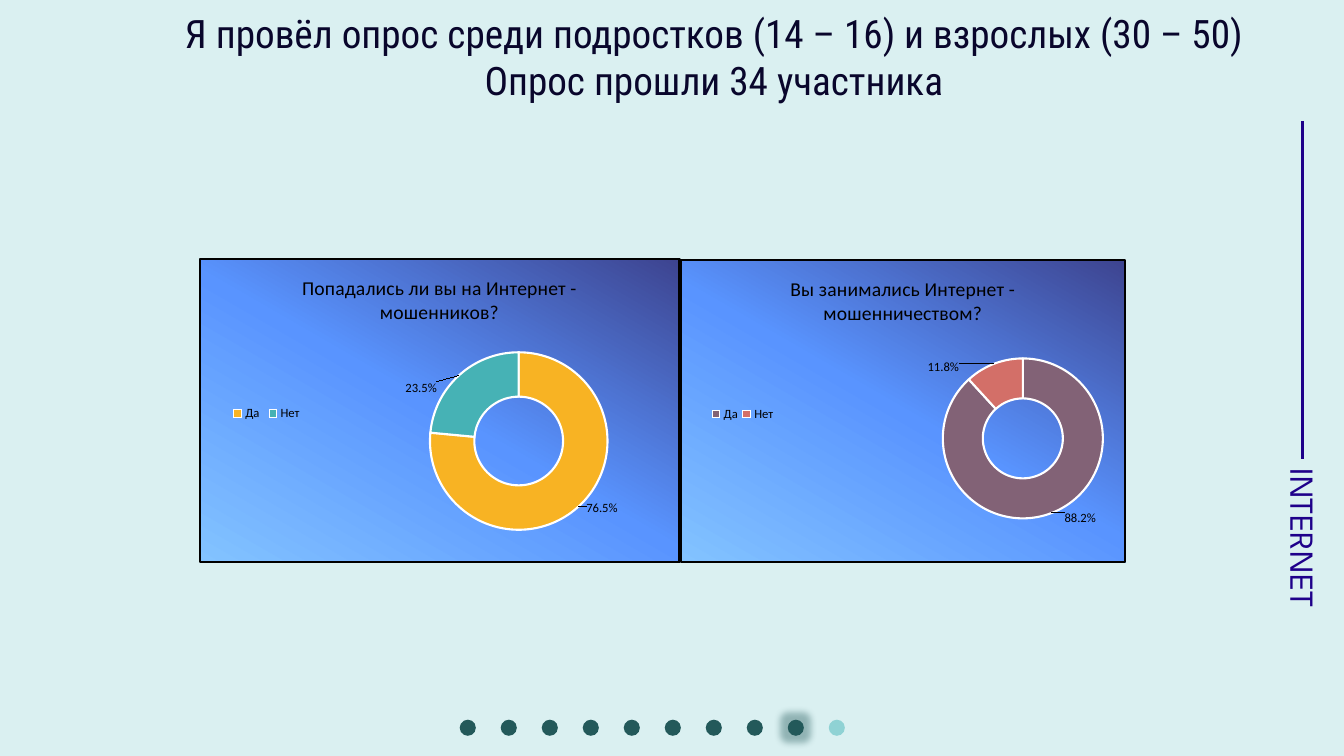
from dataclasses import dataclass

from lxml.etree import SubElement
from pptx import Presentation
from pptx.chart.data import CategoryChartData
from pptx.dml.color import RGBColor
from pptx.enum.chart import XL_CHART_TYPE, XL_LEGEND_POSITION
from pptx.enum.shapes import MSO_CONNECTOR, MSO_SHAPE
from pptx.enum.text import MSO_ANCHOR, MSO_AUTO_SIZE, PP_ALIGN
from pptx.oxml import parse_xml
from pptx.oxml.ns import nsdecls, qn
from pptx.util import Inches, Pt


@dataclass(frozen=True)
class Theme:
    background: str = "DAF0F1"
    title: str = "09062C"
    accent: str = "1E008A"
    dot: str = "23595A"
    last_dot: str = "8FD2D4"
    black: str = "000000"
    white: str = "FFFFFF"
    panel_stops: tuple = ((0, "83C3FF"), (50, "5994FF"), (100, "3D4490"))
    panel_angle: int = 300
    title_font: str = "Roboto Condensed"
    side_font: str = "League Spartan"
    chart_font: str = "Calibri"
    title_size: int = 28
    side_size: int = 24
    chart_title_size: int = 14
    chart_size: int = 10
    label_size: int = 9


THEME = Theme()


def color(value):
    return RGBColor.from_string(value)


def style_font(font, name, size, value):
    font.name = name
    font.size = Pt(size)
    font.bold = False
    font.color.rgb = color(value)


def add_run(paragraph, text, name, size, value):
    run = paragraph.add_run()
    run.text = text
    style_font(run.font, name, size, value)


def manual_layout(mode=None, **values):
    """Chart layout in fractions of the chart frame."""
    layout = parse_xml(f"<c:layout {nsdecls('c')}><c:manualLayout/></c:layout>")
    if mode == "inner":
        SubElement(layout[0], qn("c:layoutTarget")).set("val", "inner")
    if mode:
        for axis in ("xMode", "yMode"):
            SubElement(layout[0], qn(f"c:{axis}")).set("val", "edge")
    for name, value in values.items():
        SubElement(layout[0], qn(f"c:{name}")).set("val", str(value))
    return layout


def replace_layout(parent, layout, position):
    for old in parent.findall(qn("c:layout")):
        parent.remove(old)
    parent.insert(position, layout)


# Heading
def add_heading(slide, left, top, width, height, lines):
    title = slide.shapes.title
    title.left, title.top = Inches(left), Inches(top)
    title.width, title.height = Inches(width), Inches(height)
    frame = title.text_frame
    frame.word_wrap = True
    frame.auto_size = MSO_AUTO_SIZE.NONE
    frame.vertical_anchor = MSO_ANCHOR.MIDDLE
    for index, line in enumerate(lines):
        paragraph = frame.add_paragraph() if index else frame.paragraphs[0]
        paragraph.alignment = PP_ALIGN.CENTER
        paragraph.line_spacing = 1.0
        add_run(paragraph, line, THEME.title_font, THEME.title_size, THEME.title)


# Vertical line with a rotated caption
def add_side_mark(slide, center, top, line_length, text_length, text):
    line = slide.shapes.add_connector(
        MSO_CONNECTOR.STRAIGHT, Inches(center), Inches(top),
        Inches(center), Inches(top + line_length))
    line.line.color.rgb = color(THEME.accent)
    line.line.width = Pt(2.5)
    SubElement(line.element.spPr, qn("a:effectLst"))

    height = 0.5
    middle = top + line_length + text_length / 2
    caption = slide.shapes.add_textbox(
        Inches(center + 0.01 - text_length / 2), Inches(middle - height / 2),
        Inches(text_length), Inches(height))
    caption.rotation = 90
    caption.text_frame.word_wrap = True
    add_run(caption.text_frame.paragraphs[0], text,
            THEME.side_font, THEME.side_size, THEME.accent)


# Gradient panel with a survey doughnut
def add_panel(slide, box):
    panel = slide.shapes.add_shape(MSO_SHAPE.RECTANGLE, *box)
    panel.shadow.inherit = False
    panel.line.color.rgb = color(THEME.black)
    panel.line.width = Pt(1.5)
    panel.fill.gradient()
    gradient = panel.element.spPr.find(qn("a:gradFill"))
    stops = gradient.find(qn("a:gsLst"))
    for stop in list(stops):
        stops.remove(stop)
    for position, value in THEME.panel_stops:
        stop = SubElement(stops, qn("a:gs"))
        stop.set("pos", str(position * 1000))
        SubElement(stop, qn("a:srgbClr")).set("val", value)
    gradient.find(qn("a:lin")).set("ang", str(THEME.panel_angle * 60000))


def add_survey(slide, left, top, width, height, question, values,
               number_format, colors, plot_box, label_offsets):
    box = [Inches(length) for length in (left, top, width, height)]
    add_panel(slide, box)
    data = CategoryChartData(number_format=number_format)
    data.categories = ["Да", "Нет"]
    data.add_series(question, values)
    chart = slide.shapes.add_chart(XL_CHART_TYPE.DOUGHNUT, *box, data).chart
    style_font(chart.font, THEME.chart_font, THEME.chart_size, THEME.black)
    chart_space = chart.element
    chart_space.find(qn("c:chart")).addnext(parse_xml(
        f"<c:spPr {nsdecls('c', 'a')}><a:noFill/><a:ln><a:noFill/></a:ln></c:spPr>"))

    chart.has_title = True
    add_run(chart.chart_title.text_frame.paragraphs[0], question,
            THEME.chart_font, THEME.chart_title_size, THEME.black)
    chart.chart_title.include_in_layout = False

    chart.has_legend = True
    legend = chart.legend
    legend.position = XL_LEGEND_POSITION.BOTTOM
    legend.include_in_layout = False
    style_font(legend.font, THEME.chart_font, THEME.label_size, THEME.black)
    replace_layout(legend._element,
                   manual_layout("edge", x=0.06, y=0.475, w=0.16, h=0.07), 1)

    plot_area = chart_space.find(".//" + qn("c:plotArea"))
    replace_layout(plot_area, manual_layout("inner", **dict(zip("xywh", plot_box))), 0)
    chart_space.find(".//" + qn("c:holeSize")).set("val", "75")

    plot = chart.plots[0]
    plot.vary_by_categories = True
    series = plot.series[0]
    labels = series.data_labels
    labels.show_value = True
    labels.number_format = number_format
    labels.number_format_is_linked = False
    style_font(labels.font, THEME.chart_font, THEME.label_size, THEME.black)
    for index, (value, (x, y)) in enumerate(zip(colors, label_offsets)):
        point = series.points[index]
        point.format.fill.solid()
        point.format.fill.fore_color.rgb = color(value)
        point.format.line.color.rgb = color(THEME.white)
        point.format.line.width = Pt(1.5)
        style_font(point.data_label.font, THEME.chart_font, THEME.label_size, THEME.black)
        label = labels._element.findall(qn("c:dLbl"))[index]
        replace_layout(label, manual_layout(x=x, y=y), 1)
        format_element = parse_xml(f"<c:numFmt {nsdecls('c')} sourceLinked='0'/>")
        format_element.set("formatCode", number_format)
        label.insert(2, format_element)


# Row of page dots; the current page glows
def add_page_dots(slide, left, top, size, pitch, count, current):
    for index in range(count):
        dot = slide.shapes.add_shape(
            MSO_SHAPE.OVAL, Inches(left + index * pitch), Inches(top),
            Inches(size), Inches(size))
        dot.shadow.inherit = False
        dot.fill.solid()
        dot.fill.fore_color.rgb = color(THEME.last_dot if index == count - 1 else THEME.dot)
        dot.line.fill.background()
        if index == current:
            effects = dot.element.spPr.find(qn("a:effectLst"))
            glow = SubElement(effects, qn("a:glow"), rad=str(Pt(10)))
            tint = SubElement(glow, qn("a:srgbClr"), val=THEME.dot)
            SubElement(tint, qn("a:alpha"), val="40000")


def main():
    presentation = Presentation()
    presentation.slide_width, presentation.slide_height = Inches(13.33), Inches(7.5)
    slide = presentation.slides.add_slide(presentation.slide_layouts[5])
    slide.background.fill.solid()
    slide.background.fill.fore_color.rgb = color(THEME.background)
    add_heading(slide, 1.43, 0.04, 11.3, 1.04, [
        "Я провёл опрос среди подростков (14 – 16) и взрослых (30 – 50)",
        "Опрос прошли 34 участника"])
    add_side_mark(slide, 12.92, 1.2, 3.35, 1.88, "INTERNET")
    add_survey(slide, 1.98, 2.57, 4.76, 3.01, "Попадались ли вы на Интернет - мошенников?",
               (0.765, 0.235), "0.0%", ("F8B323", "46B2B5"),
               (0.48, 0.29, 0.37, 0.62), ((0.08, 0.06), (-0.11, -0.01)))
    add_survey(slide, 6.75, 2.58, 4.41, 3, "Вы занимались Интернет - мошенничеством?",
               (88.2, 11.8), '0.0"%"', ("826276", "D36F68"),
               (0.59, 0.29, 0.36, 0.6), ((0.08, 0.08), (-0.13, -0.05)))
    add_page_dots(slide, 4.56, 7.14, 0.16, 3.66 / 9, 10, 8)
    presentation.save("out.pptx")


if __name__ == "__main__":
    main()
